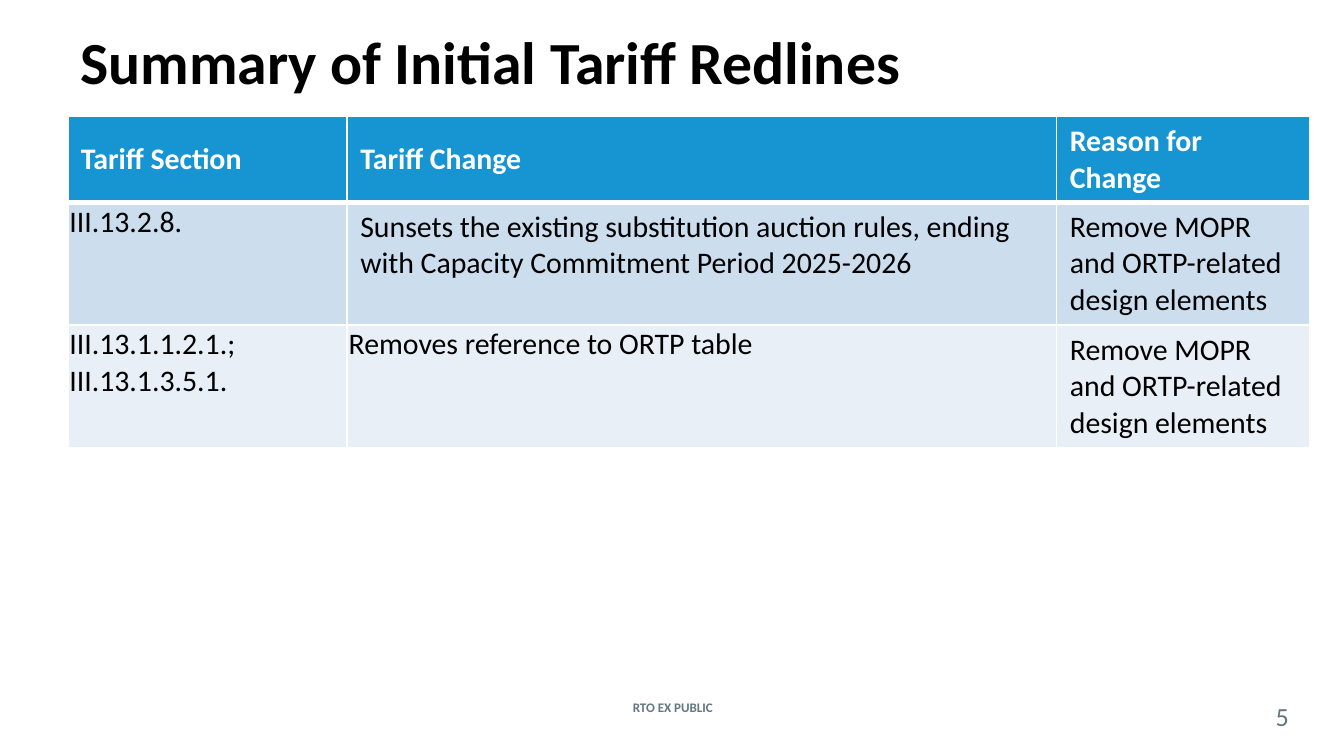
import pptx
import pptx.dml.color
import pptx.enum.text
import pptx.oxml
import pptx.oxml.ns
import pptx.util
from pptx.util import Cm

ANCHOR = pptx.enum.text.MSO_ANCHOR
ALIGN = pptx.enum.text.PP_ALIGN
BLACK, WHITE, GREY = "000000", "FFFFFF", "62777F"
HEADER_FILL, BAND_FILLS = "1795D2", ("CCDDEE", "E8EFF7")
NORMAL_INSETS = (0.25, 0.13, 0.25, 0.13)
TIGHT_INSETS = (0.03, 0.03, 0.03, 0)
NO_INSETS = (0, 0, 0, 0)


def color(hex_value):
    return pptx.dml.color.RGBColor.from_string(hex_value)


class SlideBuilder:
    def __init__(self, slide, font_name="Calibri"):
        self.slide = slide
        self.font_name = font_name

    def fill_text(self, text_frame, text, size, hex_color, bold=False, align=ALIGN.LEFT):
        """Fill a text frame, one paragraph for each line of text."""
        text_frame.word_wrap = True
        text_frame.text = text
        font_format = {"name": self.font_name, "size": pptx.util.Pt(size), "bold": bold}
        for paragraph in text_frame.paragraphs:
            paragraph.alignment = align
            for run in paragraph.runs:
                for name, value in font_format.items():
                    setattr(run.font, name, value)
                run.font.color.rgb = color(hex_color)

    def set_insets(self, target, insets):
        for side, inset in zip(("left", "top", "right", "bottom"), insets):
            setattr(target, f"margin_{side}", Cm(inset))

    def add_text(self, box, text, size, hex_color, insets=NORMAL_INSETS, **text_format):
        shape = self.slide.shapes.add_textbox(*map(Cm, box))
        shape.text_frame.vertical_anchor = ANCHOR.MIDDLE
        self.set_insets(shape.text_frame, insets)
        self.fill_text(shape.text_frame, text, size, hex_color, **text_format)

    def add_borders(self, cell, bottom_width):
        properties = cell._tc.get_or_add_tcPr()
        for side, width in (("L", 1), ("R", 1), ("T", 1), ("B", bottom_width)):
            properties.append(pptx.oxml.parse_xml(
                f'<a:ln{side} {pptx.oxml.ns.nsdecls("a")} w="{pptx.util.Pt(width)}">'
                f'<a:solidFill><a:srgbClr val="{WHITE}"/></a:solidFill></a:ln{side}>'))

    def add_table(self, left, top, widths, heights, rows, tight_cells):
        table = self.slide.shapes.add_table(
            len(rows), len(widths), Cm(left), Cm(top),
            Cm(sum(widths)), Cm(sum(heights))).table
        for column, width in zip(table.columns, widths):
            column.width = Cm(width)
        for row, height in zip(table.rows, heights):
            row.height = Cm(height)
        for row_index, row in enumerate(rows):
            header = row_index == 0
            fill = HEADER_FILL if header else BAND_FILLS[(row_index - 1) % 2]
            for column_index, text in enumerate(row):
                cell = table.cell(row_index, column_index)
                tight = (row_index, column_index) in tight_cells
                self.set_insets(cell, TIGHT_INSETS if tight else NORMAL_INSETS)
                cell.vertical_anchor = ANCHOR.MIDDLE if header else ANCHOR.TOP
                self.add_borders(cell, 3 if header else 1)
                cell.fill.solid()
                cell.fill.fore_color.rgb = color(fill)
                self.fill_text(cell.text_frame, text, 16, WHITE if header else BLACK, header)


def main():
    presentation = pptx.Presentation()
    presentation.slide_width = Cm(25.4)
    presentation.slide_height = Cm(14.29)
    builder = SlideBuilder(presentation.slides.add_slide(presentation.slide_layouts[6]))

    builder.add_text((10.85, 13.11, 3.73, 0.53), "RTO EX PUBLIC", 7, GREY,
                     bold=True, align=ALIGN.CENTER)
    builder.add_text((1.27, -0.05, 23.5, 2.39), "Summary of Initial Tariff Redlines",
                     32, BLACK, bold=True)
    builder.add_text((23.7, 13.26, 1.07, 0.56), "5", 14, GREY,
                     insets=NO_INSETS, align=ALIGN.CENTER)

    reason = "Remove MOPR and ORTP-related design elements"
    rows = [
        ("Tariff Section", "Tariff Change", "Reason for Change"),
        ("III.13.2.8.",
         "Sunsets the existing substitution auction rules, ending with "
         "Capacity Commitment Period 2025-2026", reason),
        ("III.13.1.1.2.1.;\nIII.13.1.3.5.1.", "Removes reference to ORTP table", reason),
    ]
    builder.add_table(1.28, 2.2, (5.28, 13.41, 4.78), (1.62, 2.32, 2.32), rows,
                      tight_cells={(1, 0), (2, 0), (2, 1)})
    presentation.save("out.pptx")


if __name__ == "__main__":
    main()
